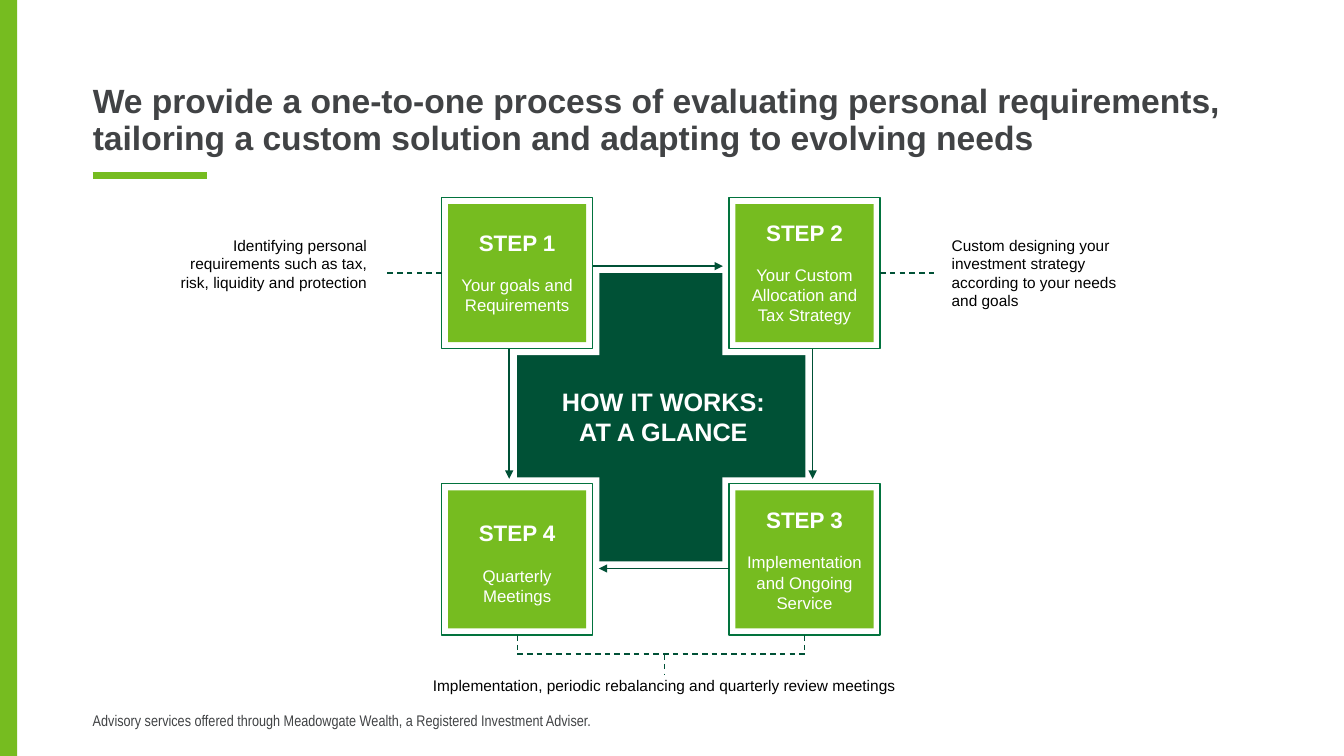
from dataclasses import dataclass

from lxml import etree
from pptx import Presentation
from pptx import util as u
from pptx.dml.color import RGBColor
from pptx.enum import dml, shapes, text
from pptx.oxml.ns import qn

ALIGN = text.PP_ALIGN
ANCHOR = text.MSO_ANCHOR


@dataclass(frozen=True)
class Theme:
    lime: str = "76BC20"
    pine: str = "005136"
    edge: str = "02733E"
    gray: str = "414345"
    white: str = "FFFFFF"
    black: str = "000000"
    font: str = "Arial"
    slim: str = "Arial Narrow"
    title: int = 24
    hub: int = 18
    step: int = 16
    body: int = 12
    note: int = 11


class Deck:
    """Draw styled elements on the current slide."""

    def __init__(self, theme):
        self.theme = theme
        self.prs = Presentation()
        self.prs.slide_width = u.Inches(13.33)
        self.prs.slide_height = u.Inches(7.5)
        self.slide = self.prs.slides.add_slide(self.prs.slide_layouts[5])

    def style(self, para, size, color, bold=False, font=None, align=ALIGN.LEFT):
        para.alignment = align
        for run in para.runs:
            run.font.name = font or self.theme.font
            run.font.size = u.Pt(size)
            run.font.bold = bold
            run.font.color.rgb = RGBColor.from_string(color)

    def title(self, words, *box):
        shape = self.slide.shapes.title
        shape.left, shape.top, shape.width, shape.height = map(u.Inches, box)
        frame = shape.text_frame
        frame.text = words
        frame.auto_size = text.MSO_AUTO_SIZE.NONE
        frame.vertical_anchor = ANCHOR.BOTTOM
        self.inset(frame)
        para = frame.paragraphs[0]
        para.line_spacing = 0.9
        self.style(para, self.theme.title, self.theme.gray, True)

    def inset(self, frame):
        frame.margin_left = frame.margin_right = 0
        frame.margin_top = frame.margin_bottom = 0

    def rect(self, box, fill=None, edge=None):
        shape = self.slide.shapes.add_shape(
            shapes.MSO_SHAPE.RECTANGLE, *map(u.Inches, box))
        shape.shadow.inherit = False
        if fill:
            shape.fill.solid()
            shape.fill.fore_color.rgb = RGBColor.from_string(fill)
        else:
            shape.fill.background()
        if edge:
            shape.line.color.rgb = RGBColor.from_string(edge)
            shape.line.width = u.Pt(1)
        else:
            shape.line.fill.background()
        return shape

    def square(self, x, y, side, fill=None, edge=None):
        return self.rect((x - side / 2, y - side / 2, side, side), fill, edge)

    def text(self, words, box, size, color, **look):
        shape = self.slide.shapes.add_textbox(*map(u.Inches, box))
        frame = shape.text_frame
        frame.word_wrap = True
        frame.text = words
        for para in frame.paragraphs:
            self.style(para, size, color, **look)
        return frame

    def line(self, start, end, color=None, width=1, dash=False, arrow=False):
        link = self.slide.shapes.add_connector(
            shapes.MSO_CONNECTOR.STRAIGHT, *map(u.Inches, start + end))
        link.line.color.rgb = RGBColor.from_string(color or self.theme.pine)
        link.line.width = u.Pt(width)
        if dash:
            link.line.dash_style = dml.MSO_LINE.DASH
        if arrow:
            tail = etree.SubElement(link.line._get_or_add_ln(), qn("a:tailEnd"))
            tail.set("type", "triangle")
        etree.SubElement(link._element.spPr, qn("a:effectLst"))
        return link

    def step(self, x, y, name, words, high, shift):
        theme = self.theme
        self.square(x, y, 1.63, theme.white)
        self.square(x, y, 1.37, theme.lime)
        frame = self.square(x, y, 1.5, edge=theme.edge)
        body = self.text(f"{name}\n{words}",
                         (x - 0.68, y - high / 2 + shift, 1.36, high),
                         theme.body, theme.white, align=ALIGN.CENTER)
        head, info = body.paragraphs
        self.style(head, theme.step, theme.white, True, align=ALIGN.CENTER)
        info.space_before = u.Pt(13.8)
        return frame


def main():
    theme = Theme()
    deck = Deck(theme)
    deck.rect((0, 0, 0.17, 7.5), theme.lime)
    deck.line((0.92, 1.74), (2.05, 1.74), theme.lime, 5)
    deck.title("We provide a one-to-one process of evaluating personal "
               "requirements, tailoring a custom solution and adapting to "
               "evolving needs", 0.92, 0.32, 11.29, 1.24)
    foot = deck.text("Advisory services offered through Meadowgate Wealth, "
                     "a Registered Investment Adviser.",
                     (0.92, 6.95, 7.64, 0.4), theme.note, theme.gray,
                     font=theme.slim)
    foot.vertical_anchor = ANCHOR.MIDDLE
    deck.inset(foot)

    west, east, north, south = 5.13, 7.98, 2.71, 5.55
    deck.rect((west, north, 2.86, 2.86), theme.pine)
    steps = [
        (west, north, "STEP 1", "Your goals and Requirements", 0.98, 0),
        (east, north, "STEP 2", "Your Custom Allocation and Tax Strategy", 1.18, 0),
        (east, south, "STEP 3", "Implementation and Ongoing Service", 1.18, 0.01),
        (west, south, "STEP 4", "Quarterly Meetings", 0.98, 0.04),
    ]
    one, two, three, four = [deck.step(*step) for step in steps]
    deck.text("HOW IT WORKS: AT A GLANCE", (5.47, 3.78, 2.22, 0.71),
              theme.hub, theme.white, bold=True, align=ALIGN.CENTER)

    arrows = [
        ((5.88, 2.64), (7.17, 2.64)),
        ((8.06, 3.46), (8.06, 4.75)),
        ((5.05, 3.46), (5.05, 4.75)),
        ((7.23, 5.64), (5.94, 5.64)),
    ]
    for start, end in arrows:
        deck.line(start, end, arrow=True)

    rail = 6.49
    links = [
        (two, 3, (8.73, north), (9.28, north)),
        (one, 1, (4.38, north), (3.83, north)),
        (four, 2, (west, 6.3), (west, rail)),
        (three, 2, (east, 6.3), (east, rail)),
    ]
    for frame, side, start, end in links:
        deck.line(start, end, dash=True).begin_connect(frame, side)
    deck.line((west, rail), (east, rail), dash=True)
    deck.line((6.59, rail), (6.59, 6.69), dash=True)

    notes = [
        ("Custom designing your investment strategy according to your needs "
         "and goals", (9.34, 2.29, 1.85, 0.84), ALIGN.LEFT),
        ("Identifying personal requirements such as tax, risk, liquidity and "
         "protection", (1.66, 2.29, 2.08, 0.66), ALIGN.RIGHT),
        ("Implementation, periodic rebalancing and quarterly review meetings",
         (4.06, 6.66, 5.06, 0.29), ALIGN.CENTER),
    ]
    for words, box, align in notes:
        deck.text(words, box, theme.note, theme.black, align=align)
    deck.prs.save("out.pptx")


if __name__ == "__main__":
    main()
